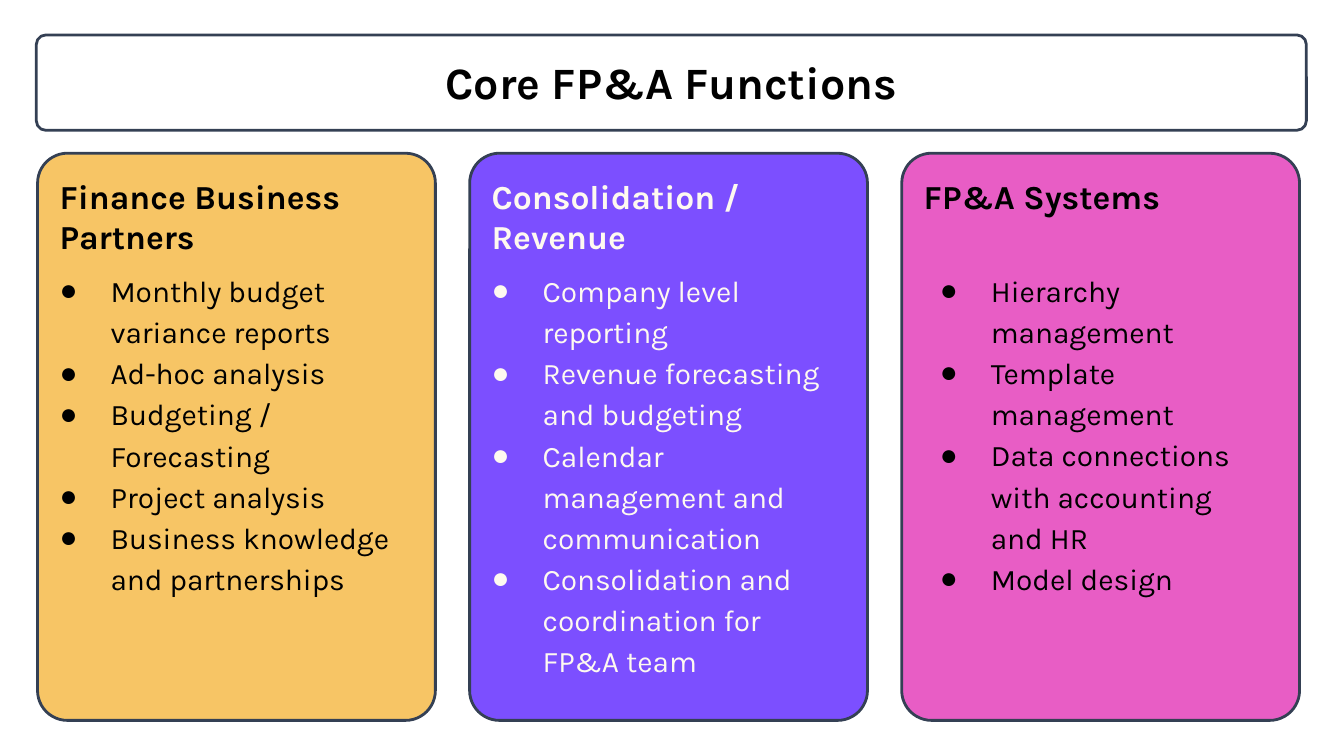
import copy

import pptx
import pptx.dml.color
import pptx.enum.shapes
import pptx.enum.text
import pptx.oxml.ns
import pptx.util
from lxml import etree

Inches = pptx.util.Inches
Pt = pptx.util.Pt
RGBColor = pptx.dml.color.RGBColor

WHITE = RGBColor(0xFF, 0xFF, 0xFF)
BLACK = RGBColor(0x00, 0x00, 0x00)
CREAM = RGBColor(0xFE, 0xF9, 0xF0)
SLATE = RGBColor(0x34, 0x40, 0x54)
AMBER = RGBColor(0xF7, 0xC5, 0x65)
VIOLET = RGBColor(0x7C, 0x4F, 0xFF)
PINK = RGBColor(0xE8, 0x5D, 0xC5)

FONT = "Karla"
BULLET_FONT = "Arial"
CARD_LEFT = 0.28
CARD_STEP = 3.215

CARDS = [
    ("Finance Business Partners", AMBER, BLACK, 0.38, 6, [
        "Monthly budget variance reports",
        "Ad-hoc analysis",
        "Budgeting / Forecasting",
        "Project analysis",
        "Business knowledge and partnerships",
    ]),
    ("Consolidation / Revenue", VIOLET, CREAM, 0.38, 6, [
        "Company level reporting",
        "Revenue forecasting and budgeting",
        "Calendar management and communication",
        "Consolidation and coordination for \nFP&A team",
    ]),
    ("FP&A Systems", PINK, BLACK, 0.5, 27.5, [
        "Hierarchy management",
        "Template management",
        "Data connections with accounting \nand HR",
        "Model design",
    ]),
]


def add_panel(page, left, top, width, height, fill, rounding):
    panel = page.shapes.add_shape(
        pptx.enum.shapes.MSO_SHAPE.ROUNDED_RECTANGLE,
        Inches(left), Inches(top), Inches(width), Inches(height))
    panel.adjustments[0] = rounding
    panel.shadow.inherit = False
    panel.fill.solid()
    panel.fill.fore_color.rgb = fill
    panel.line.color.rgb = SLATE
    panel.line.width = Pt(1.5)
    return panel


def prepare_frame(box, anchor):
    frame = box.text_frame
    frame.word_wrap = True
    frame.auto_size = pptx.enum.text.MSO_AUTO_SIZE.NONE
    frame.vertical_anchor = anchor
    frame.margin_left = frame.margin_right = Inches(0.1)
    frame.margin_top = frame.margin_bottom = Inches(0.1)
    return frame


def add_span(para, text, size, color, bold=False):
    span = para.add_run()
    span.text = text
    span.font.name = FONT
    span.font.size = Pt(size)
    span.font.bold = bold
    span.font.color.rgb = color
    return span


def add_lines(para, text, size, color):
    first, *others = text.split("\n")
    span = add_span(para, first, size, color)
    for line in others:
        para.add_line_break()
        para._p[-1].insert(0, copy.deepcopy(span._r.rPr))
        add_span(para, line, size, color)


def set_bullet(para, indent, color):
    qn = pptx.oxml.ns.qn
    properties = para._p.get_or_add_pPr()
    properties.set("marL", str(Inches(indent)))
    properties.set("indent", str(Inches(-0.38)))
    bullet_color = etree.SubElement(properties, qn("a:buClr"))
    etree.SubElement(bullet_color, qn("a:srgbClr"), val=str(color))
    etree.SubElement(properties, qn("a:buFont"), typeface=BULLET_FONT)
    etree.SubElement(properties, qn("a:buChar"), char="●")


def add_card(page, left, heading, fill, color, indent, gap, items):
    card = add_panel(page, left, 1.14, 2.96, 4.22, fill, 0.075)
    frame = prepare_frame(card, pptx.enum.text.MSO_ANCHOR.TOP)
    para = frame.paragraphs[0]
    para.alignment = pptx.enum.text.PP_ALIGN.LEFT
    add_span(para, heading, 18, color, bold=True)
    for index, item in enumerate(items):
        para = frame.add_paragraph()
        para.alignment = pptx.enum.text.PP_ALIGN.LEFT
        para.line_spacing = 1.15
        para.space_before = Pt(0 if index else gap)
        set_bullet(para, indent, color)
        add_lines(para, item, 16, color)


def place_title(page, text):
    title = page.shapes.title
    title.left, title.top = Inches(0.27), Inches(0.31)
    title.width, title.height = Inches(9.45), Inches(0.61)
    frame = prepare_frame(title, pptx.enum.text.MSO_ANCHOR.TOP)
    para = frame.paragraphs[0]
    para.alignment = pptx.enum.text.PP_ALIGN.CENTER
    add_span(para, text, 24, BLACK, bold=True)
    title.element.getparent().append(title.element)


def main():
    deck = pptx.Presentation()
    deck.slide_width, deck.slide_height = Inches(10), Inches(5.625)
    page = deck.slides.add_slide(deck.slide_layouts.get_by_name("Title Only"))
    add_panel(page, 0.27, 0.26, 9.45, 0.71, WHITE, 0.1)
    for column, card in enumerate(CARDS):
        add_card(page, CARD_LEFT + column * CARD_STEP, *card)
    place_title(page, "Core FP&A Functions")
    deck.save("out.pptx")


if __name__ == "__main__":
    main()
